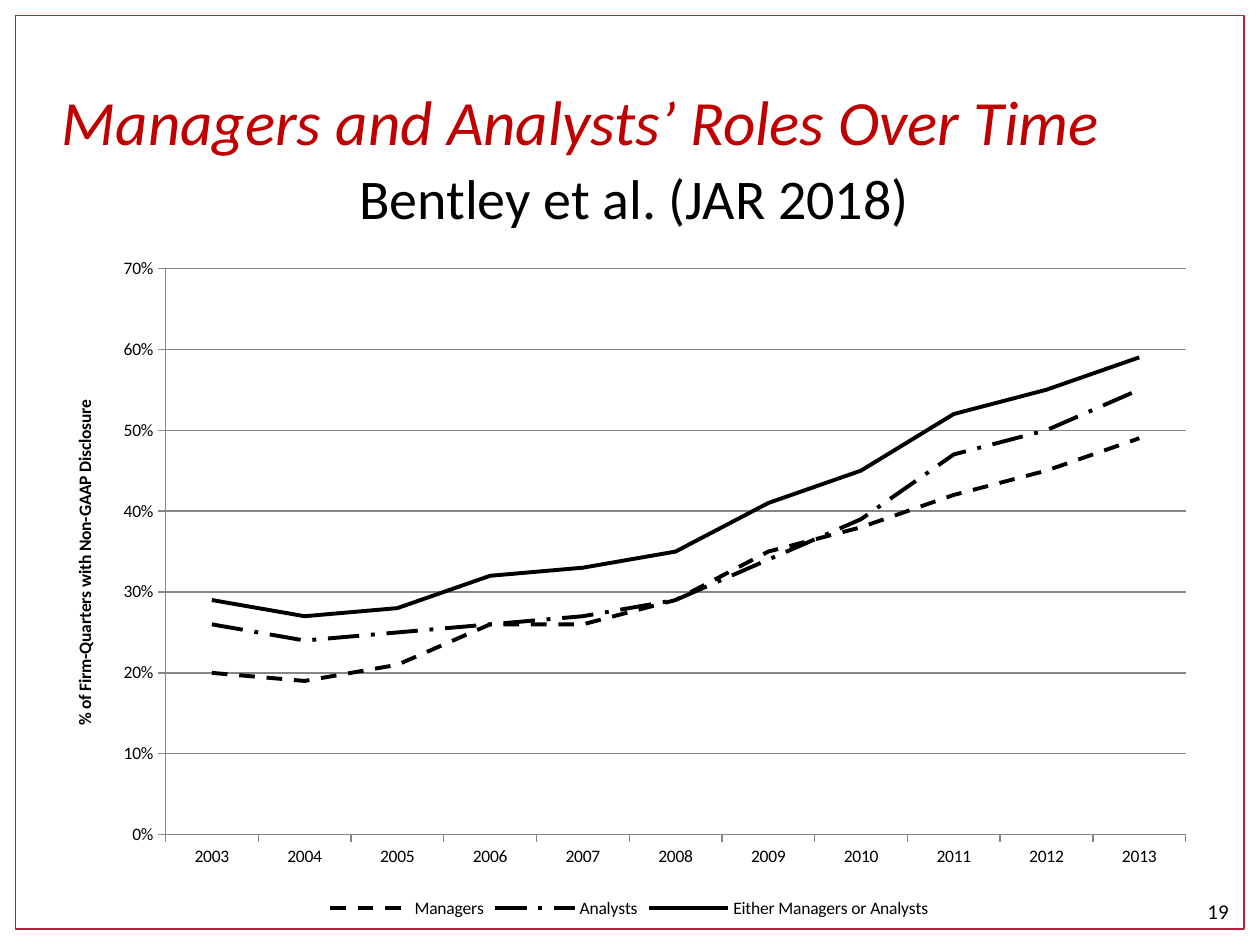
from dataclasses import dataclass

from lxml import etree
from pptx import Presentation
from pptx.chart.data import CategoryChartData
from pptx.dml.color import RGBColor
from pptx.enum.chart import XL_CHART_TYPE as ChartType, XL_LEGEND_POSITION as LegendPos
from pptx.enum.chart import XL_TICK_MARK as Tick
from pptx.enum.dml import MSO_LINE_DASH_STYLE as Dash
from pptx.enum.shapes import MSO_SHAPE as Shape
from pptx.enum.text import MSO_ANCHOR as Anchor, PP_ALIGN as Align
from pptx.oxml.ns import qn
from pptx.util import Cm, Pt


@dataclass(frozen=True)
class Theme:
    font: str = "Calibri"
    ink: RGBColor = RGBColor(0, 0, 0)
    paper: RGBColor = RGBColor(255, 255, 255)
    title: RGBColor = RGBColor(0xC0, 0, 0)
    frame: RGBColor = RGBColor(0xBC, 0x1E, 0x3E)
    grid: RGBColor = RGBColor(0x86, 0x86, 0x86)
    title_size: Pt = Pt(36)
    subtitle_size: Pt = Pt(32)
    number_size: Pt = Pt(12)
    chart_size: Pt = Pt(10)


THEME = Theme()
YEARS = [str(year) for year in range(2003, 2014)]
SERIES = [
    ("Managers", Dash.DASH,
     (0.20, 0.19, 0.21, 0.26, 0.26, 0.29, 0.35, 0.38, 0.42, 0.45, 0.49)),
    ("Analysts", Dash.LONG_DASH_DOT,
     (0.26, 0.24, 0.25, 0.26, 0.27, 0.29, 0.34, 0.39, 0.47, 0.50, 0.55)),
    ("Either Managers or Analysts", Dash.SOLID,
     (0.29, 0.27, 0.28, 0.32, 0.33, 0.35, 0.41, 0.45, 0.52, 0.55, 0.59)),
]


def set_font(font, size, color=THEME.ink, **values):
    for name, value in {"name": THEME.font, "size": size, **values}.items():
        setattr(font, name, value)
    font.color.rgb = color


def set_line(line, color, width, dash=None):
    line.color.rgb = color
    line.width = width
    if dash is not None:
        line.dash_style = dash


def add_frame(s, box):
    sp = s.shapes.add_shape(Shape.RECTANGLE, *box)
    sp.shadow.inherit = False
    sp.fill.background()
    set_line(sp.line, THEME.frame, Pt(0.75))


def add_text(s, box, text, size, color=THEME.ink, align=Align.LEFT, **font):
    sp = s.shapes.add_textbox(*box)
    tf = sp.text_frame
    tf.word_wrap = True
    tf.vertical_anchor = Anchor.MIDDLE
    p = tf.paragraphs[0]
    p.alignment = align
    r = p.add_run()
    r.text = text
    set_font(r.font, size, color, **font)
    return sp


def add_subtitle(s, box, text):
    sp = add_text(s, box, text, THEME.subtitle_size)
    sp.fill.solid()
    sp.fill.fore_color.rgb = THEME.paper
    sp.text_frame.vertical_anchor = Anchor.TOP
    sp.text_frame.paragraphs[0].line_spacing = THEME.subtitle_size


def set_plot_area(chart, **fractions):
    """Fix the inner plot area as fractions of the chart's box."""
    plot_area = chart.plots[0]._element.getparent()
    for old in plot_area.findall(qn("c:layout")):
        plot_area.remove(old)
    layout = etree.Element(qn("c:layout"))
    plot_area.insert(0, layout)
    manual = etree.SubElement(layout, qn("c:manualLayout"))
    values = {"layoutTarget": "inner", "xMode": "edge", "yMode": "edge", **fractions}
    for tag, value in values.items():
        etree.SubElement(manual, qn(f"c:{tag}")).set("val", str(value))


def style_axes(chart):
    for axis in (chart.category_axis, chart.value_axis):
        axis.major_tick_mark = Tick.OUTSIDE
        axis.minor_tick_mark = Tick.NONE
        set_line(axis.format.line, THEME.grid, Pt(0.75))
        set_font(axis.tick_labels.font, THEME.chart_size)
    axis = chart.value_axis
    scale = {"minimum_scale": 0, "maximum_scale": 0.7, "major_unit": 0.1,
             "has_major_gridlines": True}
    for name, value in scale.items():
        setattr(axis, name, value)
    set_line(axis.major_gridlines.format.line, THEME.grid, Pt(0.75))
    axis.tick_labels.number_format = "0%"
    axis.tick_labels.number_format_is_linked = False
    r = axis.axis_title.text_frame.paragraphs[0].add_run()
    r.text = "% of Firm-Quarters with Non-GAAP Disclosure"
    set_font(r.font, THEME.chart_size, bold=True)


def add_disclosure_chart(s, box):
    data = CategoryChartData(number_format="0%")
    data.categories = YEARS
    for name, _, values in SERIES:
        data.add_series(name, values)
    chart = s.shapes.add_chart(ChartType.LINE, *box, data).chart
    chart.has_title = False
    set_font(chart.font, THEME.chart_size)
    chart.plots[0].vary_by_categories = False
    for series, (_, dash, _) in zip(chart.plots[0].series, SERIES):
        series.smooth = False
        set_line(series.format.line, THEME.ink, Pt(2.25), dash)
    style_axes(chart)
    set_plot_area(chart, x=0.1, y=0.11, w=0.88, h=0.77)
    chart.has_legend = True
    chart.legend.position = LegendPos.BOTTOM
    chart.legend.include_in_layout = False
    set_font(chart.legend.font, THEME.chart_size)


def build_slide(s, width, height):
    margin = Cm(0.32)
    left = Cm(1)
    add_frame(s, (margin, margin, width - 2 * margin, height - 2 * margin))
    add_text(s, (left, Cm(0.84), Cm(22.86), Cm(3.18)),
             "Managers and Analysts’ Roles Over Time",
             THEME.title_size, THEME.title, italic=True)
    add_text(s, (Cm(23.55), Cm(18.03), Cm(1.47), Cm(0.69)), "19",
             THEME.number_size, align=Align.RIGHT)
    add_disclosure_chart(s, (left, Cm(3.78), Cm(23.37), Cm(14.83)))
    add_subtitle(s, (Cm(6.99), Cm(3.4), Cm(11.86), Cm(1.42)),
                 "Bentley et al. (JAR 2018)")


def main():
    prs = Presentation()
    prs.slide_width, prs.slide_height = Cm(25.4), Cm(19.05)
    s = prs.slides.add_slide(prs.slide_layouts[6])
    build_slide(s, prs.slide_width, prs.slide_height)
    prs.save("out.pptx")


if __name__ == "__main__":
    main()
